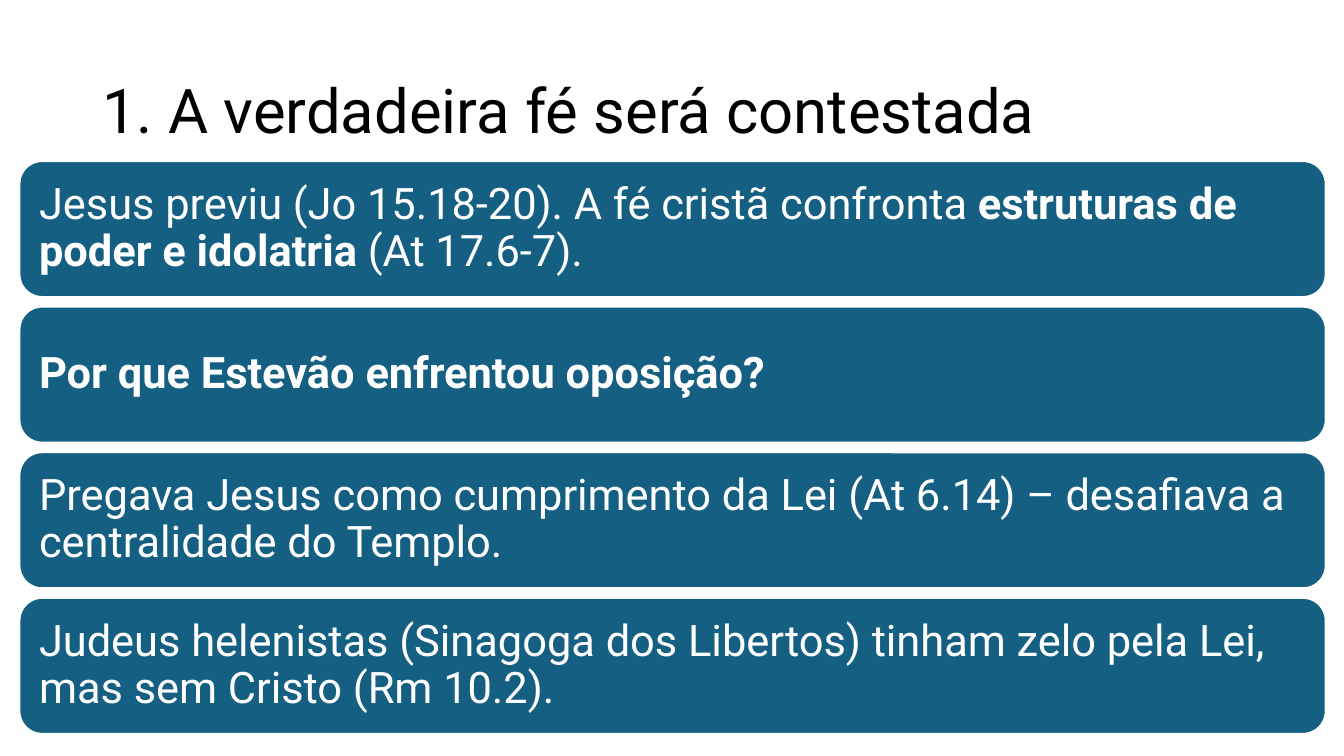
from pptx import Presentation
from pptx.dml.color import RGBColor
from pptx.enum.shapes import MSO_SHAPE
from pptx.enum.text import MSO_ANCHOR, PP_ALIGN
from pptx.util import Pt

ROUNDED = MSO_SHAPE.ROUNDED_RECTANGLE
MIDDLE = MSO_ANCHOR.MIDDLE
LEFT = PP_ALIGN.LEFT

COLORS = {"title": "000000", "card": "156082", "light": "FFFFFF"}

TITLE = "1. A verdadeira fé será contestada"
# Each statement is a list of (text, bold) pieces.
STATEMENTS = [
    [
        ("Jesus previu (Jo 15.18-20). A fé cristã confronta ", False),
        ("estruturas de poder e idolatria", True),
        (" (At 17.6-7).", False),
    ],
    [("Por que Estevão enfrentou oposição?", True)],
    [("Pregava Jesus como cumprimento da Lei (At 6.14) – desafiava a "
      "centralidade do Templo.", False)],
    [("Judeus helenistas (Sinagoga dos Libertos) tinham zelo pela Lei, "
      "mas sem Cristo (Rm 10.2).", False)],
]

CARD_LEFT, CARD_TOP = 13.9, 115
CARD_WIDTH, CARD_HEIGHT = 933.1, 97.2
CARD_PITCH = 104


class SlideBuilder:
    font = "Roboto"
    title_size = 44
    card_size = 31
    card_inset = 9.3
    line_spacing = 0.9

    def __init__(self, slide):
        self.slide = slide

    def color(self, name):
        return RGBColor.from_string(COLORS[name])

    def fill_text(self, frame, pieces, size, color):
        """Fill the frame with one paragraph of (text, bold) pieces."""
        frame.word_wrap = True
        frame.vertical_anchor = MIDDLE
        paragraph = frame.paragraphs[0]
        paragraph.alignment = LEFT
        paragraph.line_spacing = self.line_spacing
        for words, bold in pieces:
            run = paragraph.add_run()
            run.text = words
            run.font.name = self.font
            run.font.size = Pt(size)
            run.font.bold = bold
            run.font.color.rgb = self.color(color)

    def title(self, words, left, top, width, height):
        heading = self.slide.shapes.add_textbox(
            Pt(left), Pt(top), Pt(width), Pt(height))
        self.fill_text(heading.text_frame, [(words, False)],
                       self.title_size, "title")

    def card(self, pieces, left, top, width, height):
        card = self.slide.shapes.add_shape(
            ROUNDED, Pt(left), Pt(top), Pt(width), Pt(height))
        card.shadow.inherit = False
        card.fill.solid()
        card.fill.fore_color.rgb = self.color("card")
        card.line.color.rgb = self.color("light")
        card.line.width = Pt(1.5)
        frame = card.text_frame
        frame.margin_left = frame.margin_right = Pt(self.card_inset)
        frame.margin_top = frame.margin_bottom = Pt(self.card_inset)
        self.fill_text(frame, pieces, self.card_size, "light")


def main():
    deck = Presentation()
    deck.slide_width, deck.slide_height = Pt(960), Pt(540)
    builder = SlideBuilder(deck.slides.add_slide(deck.slide_layouts[6]))

    builder.title(TITLE, 66, 28.8, 828, 104.4)
    for row, statement in enumerate(STATEMENTS):
        builder.card(statement, CARD_LEFT, CARD_TOP + row * CARD_PITCH,
                     CARD_WIDTH, CARD_HEIGHT)

    deck.save("out.pptx")


if __name__ == "__main__":
    main()
